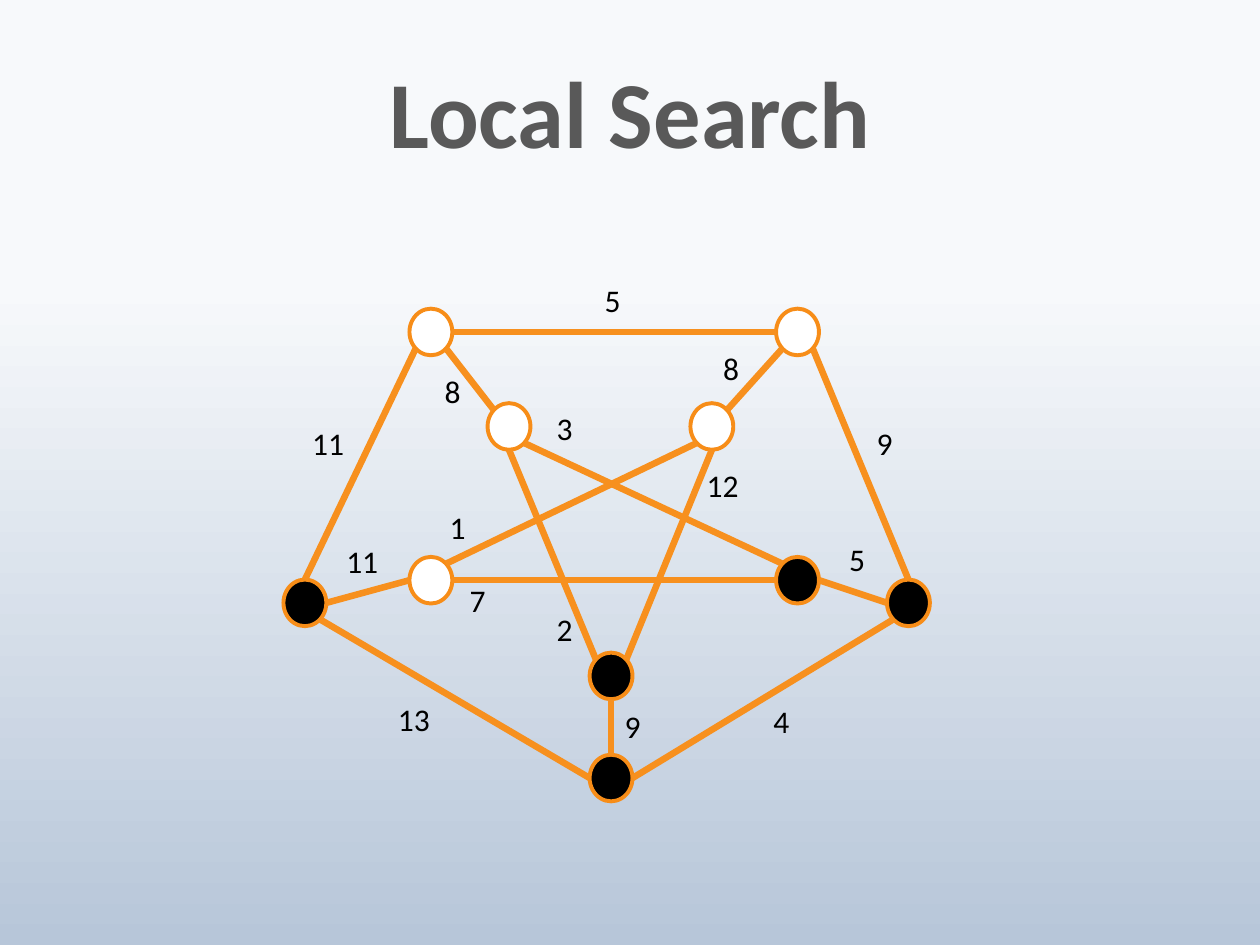
from lxml import etree
from pptx import Presentation
from pptx.dml.color import RGBColor
from pptx.enum.shapes import MSO_CONNECTOR, MSO_SHAPE
from pptx.enum.text import MSO_ANCHOR, MSO_AUTO_SIZE, PP_ALIGN
from pptx.oxml.ns import qn
from pptx.util import Inches, Pt

STRAIGHT, OVAL = MSO_CONNECTOR.STRAIGHT, MSO_SHAPE.OVAL
MIDDLE, CENTER = MSO_ANCHOR.MIDDLE, PP_ALIGN.CENTER
GROW = MSO_AUTO_SIZE.SHAPE_TO_FIT_TEXT

COLORS = {
    "sky": "F7F9FB", "haze": "B7C6D9",
    "title_top": "595959", "title_bottom": "262626",
    "white": "FFFFFF", "black": "000000",
    "ring": "F78D18", "edge": "F7901E",
}
TITLE_FONT = {"name": "Calibri", "size": Pt(54), "bold": True}
WEIGHT_FONT = {"name": "Calibri", "size": Pt(18)}

NODE_W, NODE_H = 0.34, 0.37
WEIGHT_W, WEIGHT_H = 1.17, 0.4
DIAGONAL = 0.71
SITES = {
    "n": (0, -1), "s": (0, 1), "w": (-1, 0), "e": (1, 0),
    "nw": (-DIAGONAL, -DIAGONAL), "ne": (DIAGONAL, -DIAGONAL),
    "sw": (-DIAGONAL, DIAGONAL), "se": (DIAGONAL, DIAGONAL),
}

NODES = {
    "outer_nw": (1, 0, "white"),
    "outer_ne": (3.91, 0, "white"),
    "outer_w": (0, 2.15, "black"),
    "outer_s": (2.43, 3.54, "black"),
    "outer_e": (4.79, 2.15, "black"),
    "inner_nw": (1.62, 0.75, "white"),
    "inner_ne": (3.23, 0.75, "white"),
    "inner_w": (1, 1.97, "white"),
    "inner_s": (2.43, 2.73, "black"),
    "inner_e": (3.91, 1.97, "black"),
}
EDGES = [
    ("outer_nw", "e", "outer_ne", "w", "5", 2.45, -0.27),
    ("outer_nw", "sw", "outer_w", "n", "11", 0.13, 0.87),
    ("outer_w", "se", "outer_s", "w", "13", 0.81, 3.06),
    ("outer_s", "e", "outer_e", "sw", "4", 3.79, 3.07),
    ("outer_e", "n", "outer_ne", "se", "9", 4.61, 0.87),
    ("outer_nw", "se", "inner_nw", "nw", "8", 1.18, 0.45),
    ("outer_ne", "sw", "inner_ne", "ne", "8", 3.39, 0.27),
    ("outer_w", "e", "inner_w", "w", "11", 0.4, 1.8),
    ("outer_s", "n", "inner_s", "s", "9", 2.61, 3.11),
    ("outer_e", "w", "inner_e", "e", "5", 4.39, 1.79),
    ("inner_w", "ne", "inner_ne", "sw", "1", 1.22, 1.53),
    ("inner_w", "e", "inner_e", "w", "7", 1.38, 2.11),
    ("inner_e", "nw", "inner_nw", "se", "3", 2.07, 0.75),
    ("inner_nw", "s", "inner_s", "nw", "2", 2.07, 2.34),
    ("inner_s", "ne", "inner_ne", "s", "12", 3.26, 1.2),
]


def rgb(name):
    """Return the palette colour called name."""
    return RGBColor.from_string(COLORS[name])


def apply_format(target, values):
    """Set each attribute in values on target."""
    for attribute, value in values.items():
        setattr(target, attribute, value)


def fill_downward(fill, stops):
    """Give fill a top-to-bottom gradient of (position, colour) stops."""
    fill.gradient()
    fill.gradient_angle = 270
    for stop, (position, color) in zip(fill.gradient_stops, stops):
        stop.position = position
        stop.color.rgb = rgb(color)


def place_title(slide, text, left, top, width, height):
    """Move the title placeholder into its box and format it."""
    title = slide.shapes.title
    apply_format(title, {"left": Inches(left), "top": Inches(top),
                         "width": Inches(width), "height": Inches(height)})
    title.text_frame.vertical_anchor = MIDDLE
    heading = title.text_frame.paragraphs[0]
    apply_format(heading, {"alignment": CENTER, "line_spacing": Pt(56)})
    run = heading.add_run()
    run.text = text
    apply_format(run.font, TITLE_FONT)
    fill_downward(run.font.fill, [(0.5, "title_top"), (1, "title_bottom")])


def add_node(slide, left, top, color):
    """Draw one ringed vertex."""
    node = slide.shapes.add_shape(OVAL, Inches(left), Inches(top), Inches(NODE_W), Inches(NODE_H))
    node.shadow.inherit = False
    node.fill.solid()
    node.fill.fore_color.rgb = rgb(color)
    node.line.color.rgb = rgb("ring")
    node.line.width = Pt(2.25)


def site_point(left, top, node, site):
    """Return the point where an edge meets a vertex's rim."""
    x, y, _ = NODES[node]
    dx, dy = SITES[site]
    return (Inches(left + x + NODE_W / 2 * (1 + dx)),
            Inches(top + y + NODE_H / 2 * (1 + dy)))


def add_edge(slide, start, end):
    """Draw one edge between two points."""
    edge = slide.shapes.add_connector(STRAIGHT, *start, *end)
    edge.line.color.rgb = rgb("edge")
    edge.line.width = Pt(3.75)
    etree.SubElement(edge._element.spPr, qn("a:effectLst"))


def add_weight(slide, text, left, top):
    """Write the weight of one edge."""
    weight = slide.shapes.add_textbox(Inches(left), Inches(top), Inches(WEIGHT_W), Inches(WEIGHT_H))
    apply_format(weight.text_frame, {"word_wrap": True, "auto_size": GROW})
    run = weight.text_frame.paragraphs[0].add_run()
    run.text = text
    apply_format(run.font, WEIGHT_FONT)
    run.font.color.rgb = rgb("black")


def place_graph(slide, left, top):
    """Draw the weighted graph from the given top-left corner."""
    for x, y, color in NODES.values():
        add_node(slide, left + x, top + y, color)
    for tail, tail_site, head, head_site, *_ in EDGES:
        add_edge(slide, site_point(left, top, tail, tail_site),
                 site_point(left, top, head, head_site))
    for *_, weight, x, y in EDGES:
        add_weight(slide, weight, left + x, top + y)


def main():
    """Build and save the slide."""
    deck = Presentation()
    deck.slide_width, deck.slide_height = Inches(10), Inches(7.5)
    slide = deck.slides.add_slide(deck.slide_layouts[5])
    fill_downward(slide.background.fill, [(0.3, "sky"), (1, "haze")])
    place_title(slide, "Local Search", 1, 0.25, 8, 1.38)
    place_graph(slide, 2.25, 2.45)
    deck.save("out.pptx")


if __name__ == "__main__":
    main()
